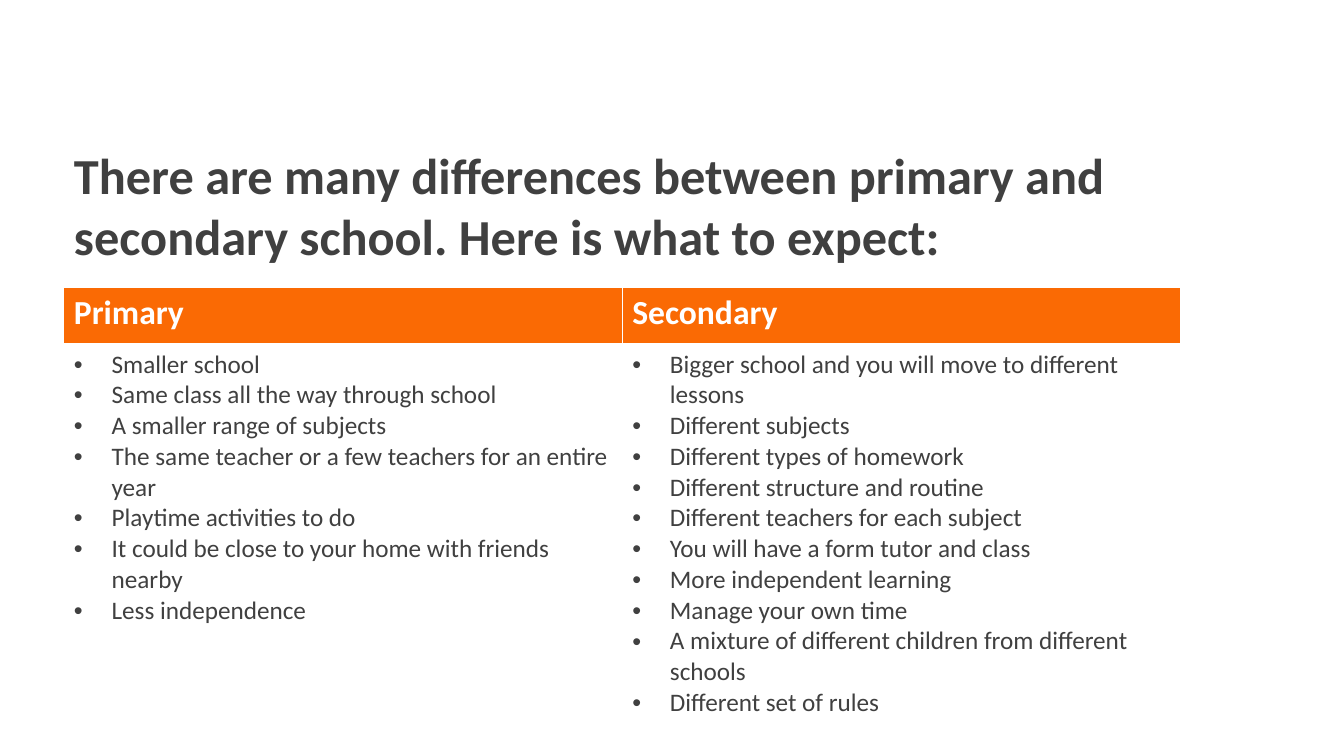
from pptx import Presentation, util as u
from pptx.dml.color import RGBColor
from pptx.enum import text
from pptx.oxml.ns import qn
from lxml import etree

TITLE = ("There are many differences between primary and secondary school. "
         "Here is what to expect:")
SCHOOLS = {
    "Primary": [
        "Smaller school",
        "Same class all the way through school",
        "A smaller range of subjects",
        "The same teacher or a few teachers for an entire year",
        "Playtime activities to do",
        "It could be close to your home with friends nearby",
        "Less independence",
    ],
    "Secondary": [
        "Bigger school and you will move to different lessons",
        "Different subjects",
        "Different types of homework",
        "Different structure and routine",
        "Different teachers for each subject",
        "You will have a form tutor and class",
        "More independent learning",
        "Manage your own time",
        "A mixture of different children from different schools",
        "Different set of rules",
    ],
}
GREY, WHITE, ORANGE = "404040", "FFFFFF", "FA6A04"
LEFT, WIDTH = u.Cm(1.61), u.Cm(28.14)
HEAD, BODY = u.Cm(1.42), u.Cm(9.32)
INDENT = u.Cm(0.95)


def color(code):
    return RGBColor.from_string(code)


def style(para, size, code, bold):
    font = para.font
    font.name, font.size, font.bold = "Calibri", u.Pt(size), bold
    font.color.rgb = color(code)


def bullet(para):
    props = para._p.get_or_add_pPr()
    props.set("marL", str(INDENT))
    props.set("indent", str(-INDENT))
    etree.SubElement(props, qn("a:buFont"), typeface="Arial")
    etree.SubElement(props, qn("a:buChar"), char="•")


def add_title(slide):
    title = slide.shapes.title
    title.left, title.top = LEFT, u.Cm(3.51)
    title.width, title.height = WIDTH, u.Cm(3.33)
    frame = title.text_frame
    frame.text = TITLE
    frame.word_wrap = True
    frame.auto_size = text.MSO_AUTO_SIZE.SHAPE_TO_FIT_TEXT
    frame.vertical_anchor = text.MSO_ANCHOR.TOP
    para = frame.paragraphs[0]
    para.alignment = text.PP_ALIGN.LEFT
    style(para, 36, GREY, True)


def add_schools(slide):
    table = slide.shapes.add_table(2, len(SCHOOLS), LEFT, u.Cm(7.25),
                                   WIDTH, HEAD + BODY).table
    table.rows[0].height, table.rows[1].height = HEAD, BODY
    for col, (name, points) in enumerate(SCHOOLS.items()):
        head, body = table.cell(0, col), table.cell(1, col)
        head.text = name
        head.fill.solid()
        head.fill.fore_color.rgb = color(ORANGE)
        style(head.text_frame.paragraphs[0], 24, WHITE, True)

        body.text = "\n".join(points)
        body.fill.background()
        for para in body.text_frame.paragraphs:
            bullet(para)
            style(para, 18, GREY, False)


def main():
    deck = Presentation()
    deck.slide_width, deck.slide_height = u.Cm(33.87), u.Cm(19.05)
    slide = deck.slides.add_slide(deck.slide_layouts[5])
    add_title(slide)
    add_schools(slide)
    deck.save("out.pptx")


if __name__ == "__main__":
    main()
